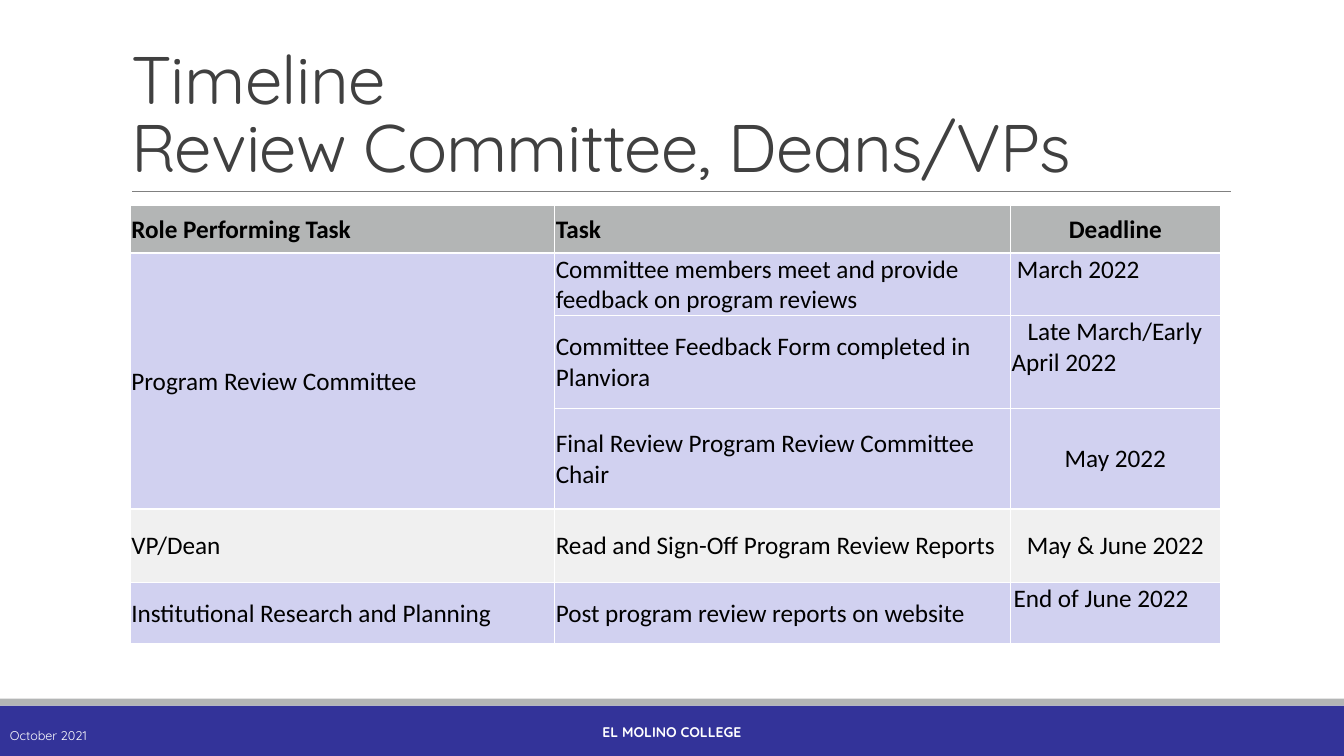
from lxml.etree import SubElement
from pptx import Presentation
from pptx.dml.color import RGBColor
from pptx.enum.shapes import MSO_CONNECTOR as CONN, MSO_SHAPE as SHAPE
from pptx.enum.text import MSO_ANCHOR as ANCHOR, MSO_AUTO_SIZE as AUTO, PP_ALIGN as ALIGN
from pptx.oxml.ns import qn
from pptx.util import Inches, Pt


def rgb(value):
    """Return the colour of a hex string."""
    return RGBColor.from_string(value)


class Deck:
    """Style and current slide; lengths are percentages of the slide's size."""

    HEAD, BODY = "Quicksand", "Calibri"
    INK, BLACK, WHITE, RULE = "404040", "000000", "FFFFFF", "808080"
    NAVY, GREY, LILAC, PALE = "333399", "B3B5B5", "D1D1F0", "F0F0F0"

    def __init__(self):
        """Open a widescreen presentation with one title-only slide."""
        self.prs = Presentation()
        self.prs.slide_width, self.prs.slide_height = Inches(13.33), Inches(7.5)
        self.s = self.prs.slides.add_slide(self.prs.slide_layouts[5])

    def x(self, share):
        """Convert a share of the width."""
        return round(self.prs.slide_width * share / 100)

    def y(self, share):
        """Convert a share of the height."""
        return round(self.prs.slide_height * share / 100)

    def box(self, x, y, w, h):
        """Convert a frame given in shares."""
        return self.x(x), self.y(y), self.x(w), self.y(h)

    def format(self, tf, size, font, color, bold=False, align=ALIGN.LEFT):
        """Format every run of a text frame."""
        for p in tf.paragraphs:
            p.alignment = align
            for r in p.runs:
                r.font.size, r.font.name, r.font.bold = Pt(size), font, bold
                r.font.color.rgb = rgb(color)

    def title(self, text, *frame):
        """Place and format the title placeholder."""
        sp = self.s.shapes.title
        sp.left, sp.top, sp.width, sp.height = self.box(*frame)
        tf = sp.text_frame
        tf.text, tf.word_wrap = text, True
        tf.auto_size, tf.vertical_anchor = AUTO.NONE, ANCHOR.BOTTOM
        tf.paragraphs[0].line_spacing = 0.85
        self.format(tf, 48, self.HEAD, self.INK)
        for r in tf.paragraphs[0].runs:
            r.font._element.set("spc", "-50")

    def bar(self, color, *frame):
        """Add a plain filled rectangle."""
        sp = self.s.shapes.add_shape(SHAPE.RECTANGLE, *self.box(*frame))
        sp.shadow.inherit = False
        sp.fill.solid()
        sp.fill.fore_color.rgb = rgb(color)
        sp.line.fill.background()

    def rule(self, x1, x2, y):
        """Add a thin horizontal line."""
        line = self.s.shapes.add_connector(
            CONN.STRAIGHT, self.x(x1), self.y(y), self.x(x2), self.y(y))
        line.line.color.rgb, line.line.width = rgb(self.RULE), Pt(0.5)
        SubElement(line._element.spPr, qn("a:effectLst"))

    def text(self, text, size, *frame, **style):
        """Add a white footer text."""
        tf = self.s.shapes.add_textbox(*self.box(*frame)).text_frame
        tf.text, tf.word_wrap, tf.vertical_anchor = text, True, ANCHOR.MIDDLE
        self.format(tf, size, self.HEAD, self.WHITE, **style)

    def cell(self, cell, text, fill, bold=False, align=ALIGN.LEFT):
        """Write one table cell with white borders."""
        tcPr = cell._tc.get_or_add_tcPr()
        for side in ("lnL", "lnR", "lnT", "lnB"):
            ln = SubElement(tcPr, qn(f"a:{side}"), w=str(Pt(1)))
            SubElement(SubElement(ln, qn("a:solidFill")), qn("a:srgbClr"), val=self.WHITE)
        cell.fill.solid()
        cell.fill.fore_color.rgb = rgb(fill)
        cell.margin_left = cell.margin_right = cell.margin_top = Inches(0.01)
        cell.margin_bottom, cell.vertical_anchor = 0, ANCHOR.MIDDLE
        cell.text_frame.text = text
        self.format(cell.text_frame, 18, self.BODY, self.BLACK, bold, align)

    def table(self, x, y, cols, rows, data, fills):
        """Add a table whose last column is centred and first row bold."""
        t = self.s.shapes.add_table(
            len(rows), len(cols), *self.box(x, y, sum(cols), sum(rows))).table
        t.horz_banding = t.first_row = False
        for col, w in zip(t.columns, cols):
            col.width = self.x(w)
        for row, h in zip(t.rows, rows):
            row.height = self.y(h)
        for i, (values, fill) in enumerate(zip(data, fills)):
            for j, value in enumerate(values):
                align = ALIGN.CENTER if j == len(cols) - 1 else ALIGN.LEFT
                self.cell(t.cell(i, j), value, fill, i == 0, align)
        return t

    def pin(self, cell, indent):
        """Set a cell's text at its top left with a first-line indent."""
        cell.vertical_anchor = ANCHOR.TOP
        p = cell.text_frame.paragraphs[0]
        p.alignment = ALIGN.LEFT
        p._p.get_or_add_pPr().set("indent", str(self.x(indent)))


def main():
    """Build the timeline slide."""
    d = Deck()
    d.bar(d.NAVY, 0, 93.33, 100, 6.67)
    d.bar(d.GREY, 0, 92.4, 100, 0.93)
    d.rule(9.83, 91.6, 25.33)
    d.title("Timeline\vReview Committee, Deans/VPs", 9, 4.13, 82.52, 21.2)
    d.text("October 2021", 9, 0, 94.67, 20.25, 5.33)
    d.text("EL MOLINO COLLEGE", 10, 30.23, 94.13, 39.53, 5.33, bold=True, align=ALIGN.CENTER)

    data = [
        ("Role Performing Task", "Task", "Deadline"),
        ("Program Review Committee",
         "Committee members meet and provide feedback on program reviews", "March 2022"),
        ("", "Committee Feedback Form completed in Planviora", "Late March/Early April 2022"),
        ("", "Final Review Program Review Committee Chair", "May 2022"),
        ("VP/Dean", "Read and Sign-Off Program Review Reports", "May & June 2022"),
        ("Institutional Research and Planning",
         "Post program review reports on website", "End of June 2022"),
    ]
    fills = [d.GREY, d.LILAC, d.LILAC, d.LILAC, d.PALE, d.LILAC]
    t = d.table(9.7, 27.2, (31.58, 33.91, 15.6),
                (6.27, 8.27, 12.27, 13.33, 9.73, 8.13), data, fills)
    t.cell(1, 0).merge(t.cell(3, 0))
    for row, indent in ((1, 0.4), (2, 1.2), (5, 0.15)):
        d.pin(t.cell(row, 2), indent)
    d.prs.save("out.pptx")


if __name__ == "__main__":
    main()
